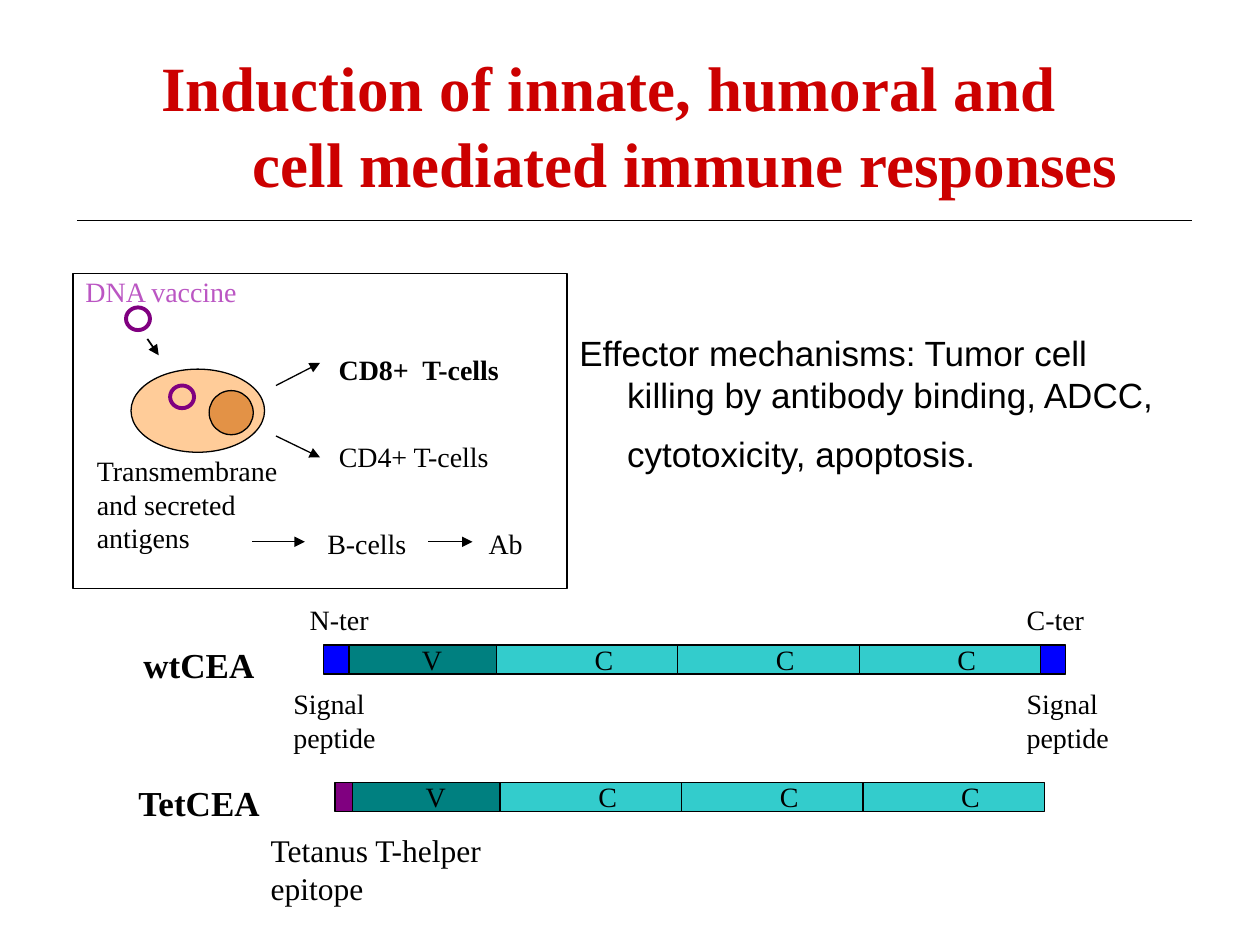
import pptx
import pptx.util
import pptx.dml.color
import pptx.enum.shapes
import pptx.enum.text
import pptx.oxml

SHAPE = pptx.enum.shapes.MSO_SHAPE
IN, PT = pptx.util.Inches, pptx.util.Pt
SERIF, SANS = "Times New Roman", "Arial"
BLACK, RED, PINK = "000000", "CC0000", "BB56C3"
BLUE, PURPLE, TEAL, CYAN = "0000FF", "800080", "008080", "33CCCC"
PEACH, ORANGE = "FFCC99", "E39246"

# text, left, top, width, height, format
LABELS = [
    ("DNA vaccine", 0.58, 2.13, 1.58, 0.37, {"color": PINK}),
    ("CD8+  T-cells", 2.59, 2.75, 1.66, 0.37, {"bold": True}),
    ("CD4+ T-cells", 2.59, 3.44, 1.58, 0.37, {}),
    ("Transmembrane and secreted antigens", 0.67, 3.55, 1.92, 0.9, {}),
    ("B-cells", 2.5, 4.13, 0.96, 0.37, {}),
    ("Ab", 3.78, 4.13, 0.6, 0.37, {}),
    ("N-ter", 2.36, 4.73, 0.82, 0.37, {}),
    ("C-ter", 8.05, 4.73, 0.89, 0.37, {}),
    ("Signal peptide", 2.23, 5.4, 1.1, 0.64, {}),
    ("Signal peptide", 8.05, 5.4, 1.2, 0.64, {}),
    ("wtCEA", 1.04, 5.06, 1.23, 0.43, {"size": 20, "bold": True}),
    ("TetCEA", 1.0, 6.15, 1.23, 0.43, {"size": 20, "bold": True}),
    ("Tetanus T-helper epitope", 2.05, 6.55, 1.87, 0.7, {"size": 18}),
]

# start, end, line width
ARROWS = [
    ((1.17, 2.69), (1.26, 2.82), 1),
    ((2.19, 3.06), (2.54, 2.88), 0.75),
    ((2.19, 3.46), (2.54, 3.63), 0.75),
    ((2.0, 4.3), (2.42, 4.3), 0.75),
    ((3.4, 4.3), (3.75, 4.3), 0.75),
]

# kind, left, top, width, height, fill, line colour, line width
CELL = [
    (SHAPE.RECTANGLE, 0.58, 2.17, 3.92, 2.5, None, BLACK, 0.75),
    (SHAPE.OVAL, 1.04, 2.93, 1.06, 0.66, PEACH, BLACK, 0.75),
    (SHAPE.FLOWCHART_CONNECTOR, 1.66, 3.1, 0.35, 0.35, ORANGE, BLACK, 0.75),
    (SHAPE.OVAL, 1.0, 2.44, 0.19, 0.18, None, PURPLE, 2.25),
    (SHAPE.OVAL, 1.35, 3.06, 0.19, 0.18, None, PURPLE, 2.25),
]

# domain: letter, width, fill, inset of the letter
TAG = (None, 0.2, BLUE, 0)
CORE = [("V", 1.17, TEAL, 0.48)] + [("C", 1.44, CYAN, 0.68)] * 3
CHAINS = [
    (2.57, 5.12, [TAG] + CORE + [TAG]),
    (2.66, 6.21, [(None, 0.14, PURPLE, 0)] + CORE),
]

deck = pptx.Presentation()
deck.slide_width, deck.slide_height = IN(10), IN(7.5)
slide = deck.slides.add_slide(deck.slide_layouts[6])


def rgb(code):
    return pptx.dml.color.RGBColor.from_string(code)


def box(kind, x, y, w, h, fill, edge, width):
    item = slide.shapes.add_shape(kind, IN(x), IN(y), IN(w), IN(h))
    item.shadow.inherit = False
    if fill:
        item.fill.solid()
        item.fill.fore_color.rgb = rgb(fill)
    else:
        item.fill.background()
    item.line.color.rgb = rgb(edge)
    item.line.width = PT(width)


def text(words, x, y, w, h, size=16, font=SERIF, color=BLACK, bold=False,
         hang=(), align="LEFT", anchor="TOP", gap=0):
    """hang holds one (margin, first-line indent) pair per paragraph."""
    frame = slide.shapes.add_textbox(IN(x), IN(y), IN(w), IN(h)).text_frame
    frame.word_wrap = True
    frame.vertical_anchor = getattr(pptx.enum.text.MSO_ANCHOR, anchor)
    frame.text = words
    for i, para in enumerate(frame.paragraphs):
        para.alignment = getattr(pptx.enum.text.PP_ALIGN, align)
        para.space_before = PT(gap if i else 0)
        if hang:
            left, first = hang[i]
            props = para._p.get_or_add_pPr()
            props.set("marL", str(IN(left)))
            props.set("indent", str(IN(first)))
        for run in para.runs:
            run.font.size, run.font.name, run.font.bold = PT(size), font, bold
            run.font.color.rgb = rgb(color)


def line(start, end, width=0.75, head=False):
    item = slide.shapes.add_connector(
        pptx.enum.shapes.MSO_CONNECTOR.STRAIGHT, *map(IN, start + end))
    item.line.color.rgb = rgb(BLACK)
    item.line.width = PT(width)
    if head:
        tip = pptx.oxml.parse_xml(
            '<a:tailEnd xmlns:a="http://schemas.openxmlformats.org/'
            'drawingml/2006/main" type="triangle"/>')
        item.line._get_or_add_ln().append(tip)
    item._element.spPr.append(pptx.oxml.parse_xml(
        '<a:effectLst xmlns:a="http://schemas.openxmlformats.org/'
        'drawingml/2006/main"/>'))


text("Induction of innate, humoral and\vcell mediated immune responses",
     0.58, 0.36, 8.5, 1.25, size=36, color=RED, bold=True,
     hang=[(1.22, -1.22)], align="CENTER", anchor="MIDDLE")
line((0.61, 1.75), (9.46, 1.75))
text("Effector mechanisms: Tumor cell killing by antibody binding, ADCC,\n"
     "cytotoxicity, apoptosis.", 4.5, 2.58, 4.83, 1.92, size=20, font=SANS,
     hang=[(0.38, -0.38), (0.38, 0)], gap=10)

for part in CELL:
    box(*part)
for start, end, width in ARROWS:
    line(start, end, width, head=True)

for x, y, parts in CHAINS:
    for letter, width, fill, inset in parts:
        box(SHAPE.RECTANGLE, x, y, width, 0.23, fill, BLACK, 0.75)
        if letter:
            text(letter, x + inset, y - 0.07, 0.55, 0.37)
        x += width

for words, x, y, w, h, style in LABELS:
    text(words, x, y, w, h, **style)

deck.save("out.pptx")
